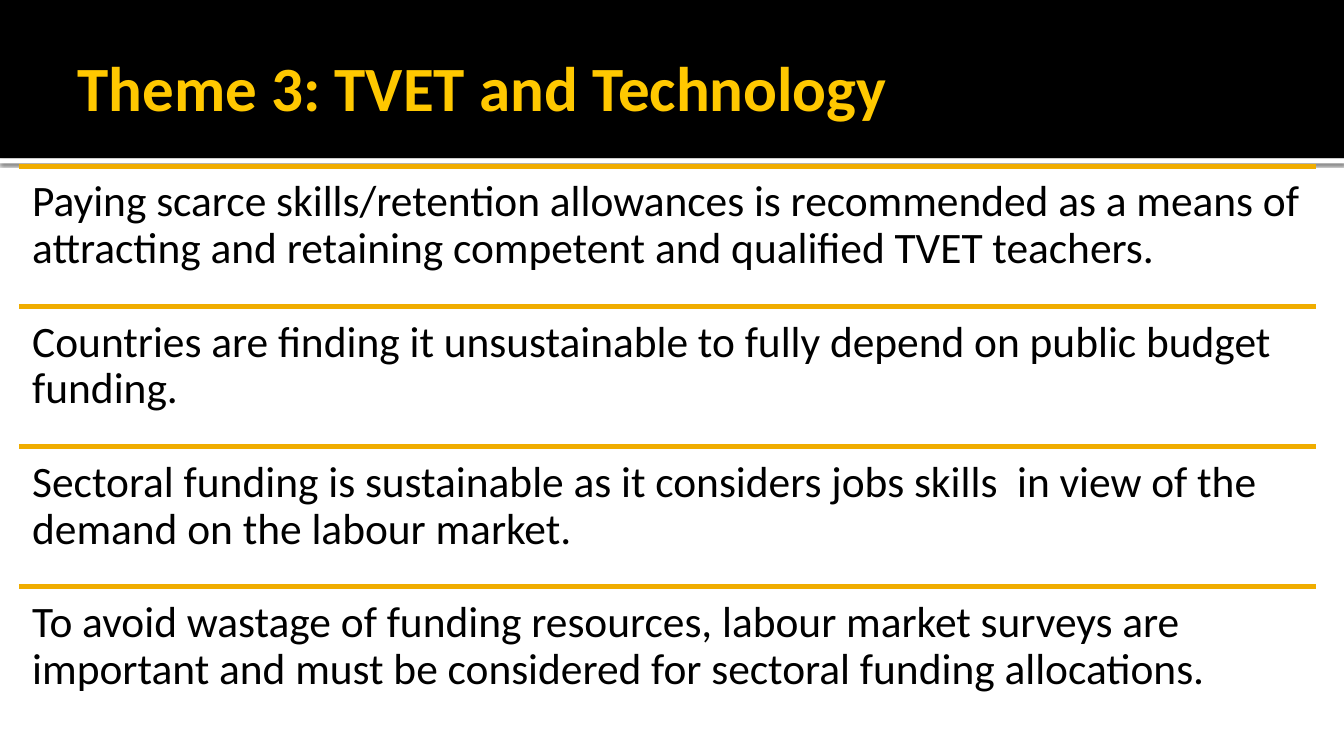
from lxml.etree import SubElement
from pptx import Presentation
from pptx.dml.color import RGBColor
from pptx.enum.shapes import MSO_CONNECTOR as LINE, MSO_SHAPE as SHAPE
from pptx.enum.text import MSO_ANCHOR as ANCHOR
from pptx.oxml.ns import qn
from pptx.util import Inches, Pt


def color(value):
    return RGBColor.from_string(value)


def add_text(text, left, top, width, height, size, hue, bold=False,
             anchor=ANCHOR.TOP, insets=(0.13, 0.13, 0.13, 0.13), spacing=1.0):
    frame = slide.shapes.add_textbox(
        Inches(left), Inches(top), Inches(width), Inches(height)).text_frame
    frame.word_wrap = True
    frame.vertical_anchor = anchor
    frame.margin_left, frame.margin_top, frame.margin_right, frame.margin_bottom = map(Inches, insets)
    paragraph = frame.paragraphs[0]
    paragraph.line_spacing = spacing
    run = paragraph.add_run()
    run.text = text
    run.font.name = "Calibri"
    run.font.size = Pt(size)
    run.font.bold = bold
    run.font.color.rgb = color(hue)


deck = Presentation()
deck.slide_width, deck.slide_height = Inches(13.33), Inches(7.5)
slide = deck.slides.add_slide(deck.slide_layouts[6])

bands = []
for top, height, hue in [(1.57, 0.05, "FFFFFF"), (0, 1.57, "000000")]:
    band = slide.shapes.add_shape(
        SHAPE.RECTANGLE, 0, Inches(top), deck.slide_width, Inches(height))
    band.fill.solid()
    band.fill.fore_color.rgb = color(hue)
    band.line.fill.background()
    band.shadow.inherit = False
    bands.append(band)

edge_effects = bands[0].element.spPr.find(qn("a:effectLst"))
edge_shadow = SubElement(edge_effects, qn("a:outerShdw"), blurRad=str(Pt(2.5)),
                         dist=str(Pt(0.8)), dir="5400000", rotWithShape="0")
shadow_color = SubElement(edge_shadow, qn("a:srgbClr"), val="000000")
SubElement(shadow_color, qn("a:alpha"), val="60000")

add_text("Theme 3: TVET and Technology", 0.67, 0.17, 12, 1.37, 45, "FFC800",
         bold=True, anchor=ANCHOR.MIDDLE, insets=(0.1, 0.05, 0.05, 0.05))

findings = [
    "Paying scarce skills/retention allowances is recommended as a means of attracting and retaining competent and qualified TVET teachers.",
    "Countries are finding it unsustainable to fully depend on public budget funding.",
    "Sectoral funding is sustainable as it considers jobs skills  in view of the demand on the labour market.",
    "To avoid wastage of funding resources, labour market surveys are important and must be considered for sectoral funding allocations.",
]
left, first_top, width, row_height = 0.19, 1.65, 12.86, 1.39

for index, finding in enumerate(findings):
    top = first_top + index * row_height
    divider = slide.shapes.add_connector(
        LINE.STRAIGHT, Inches(left), Inches(top), Inches(left + width), Inches(top))
    divider.line.color.rgb = color("F0AD00")
    divider.line.width = Pt(3.78)
    SubElement(divider.element.spPr, qn("a:effectLst"))
    add_text(finding, left, top, width, row_height, 31, "000000", spacing=0.9)

deck.save("out.pptx")
